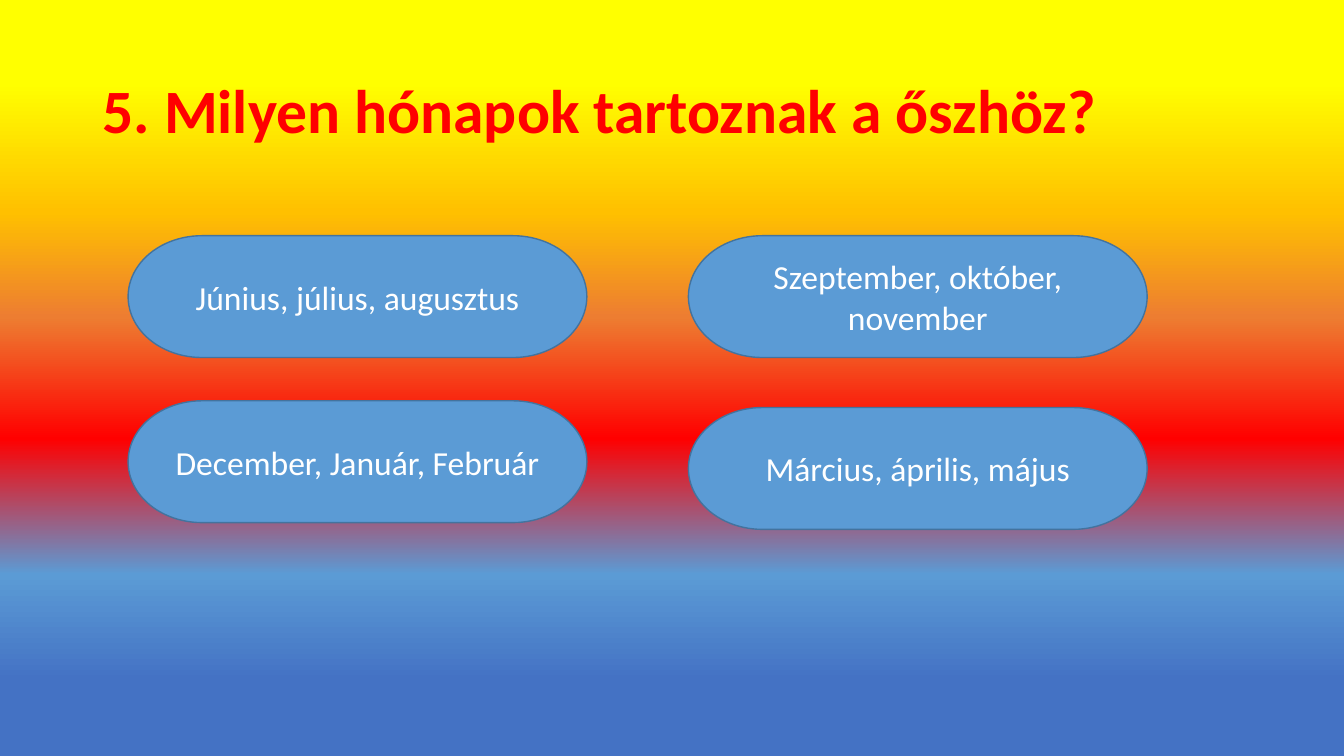
from lxml import etree
from pptx import Presentation
from pptx.dml.color import RGBColor
from pptx.enum.shapes import MSO_SHAPE
from pptx.enum.text import MSO_ANCHOR, PP_ALIGN
from pptx.oxml.ns import qn
from pptx.util import Cm, Pt

TERMINATOR = MSO_SHAPE.FLOWCHART_TERMINATOR
MIDDLE = MSO_ANCHOR.MIDDLE
LEFT, CENTER = PP_ALIGN.LEFT, PP_ALIGN.CENTER
TITLE_ONLY = 5

QUESTION = "5. Milyen hónapok tartoznak a őszhöz?"
# One column of answers per entry: (answer, top in cm)
ANSWER_COLUMNS = [
    [("Június, július, augusztus", 5.94), ("December, Január, Február", 10.1)],
    [("Szeptember, október, november", 5.94), ("Március, április, május", 10.27)],
]
COLORS = {
    "question": "FF0000",
    "answer": "FFFFFF",
    "button": "5B9BD5",
    "outline": "43739E",
}
SUNSET = {11: "FFFF00", 28: "FFC000", 42: "ED7D31",
          58: "FF0000", 76: "5B9BD5", 90: "4472C4"}

FONT = "Calibri"
FIRST_COLUMN, COLUMN_STEP = 3.23, 14.12
BUTTON_WIDTH, BUTTON_HEIGHT = 11.56, 3.07


def write_text(shape, text, size, color, align=CENTER, bold=False, line_spacing=1.0):
    frame = shape.text_frame
    frame.word_wrap = True
    frame.vertical_anchor = MIDDLE
    paragraph = frame.paragraphs[0]
    paragraph.alignment = align
    paragraph.line_spacing = line_spacing
    run = paragraph.add_run()
    run.text = text
    run.font.name = FONT
    run.font.size = Pt(size)
    run.font.bold = bold
    run.font.color.rgb = RGBColor.from_string(color)


def paint_background(slide, stops):
    """Fill the slide with a gradient running from top to bottom."""
    fill = slide.background.fill
    fill.gradient()
    fill.gradient_angle = 270
    stop_list = next(slide.element.iter(qn("a:gsLst")))
    for old_stop in list(stop_list):
        stop_list.remove(old_stop)
    for percent, color in stops.items():
        stop = etree.SubElement(stop_list, qn("a:gs"), pos=str(percent * 1000))
        etree.SubElement(stop, qn("a:srgbClr"), val=color)


def add_answer(slide, answer, left, top):
    button = slide.shapes.add_shape(
        TERMINATOR, Cm(left), Cm(top), Cm(BUTTON_WIDTH), Cm(BUTTON_HEIGHT))
    button.shadow.inherit = False
    button.fill.solid()
    button.fill.fore_color.rgb = RGBColor.from_string(COLORS["button"])
    button.line.color.rgb = RGBColor.from_string(COLORS["outline"])
    button.line.width = Pt(1)
    write_text(button, answer, size=24, color=COLORS["answer"])


def main():
    deck = Presentation()
    deck.slide_width, deck.slide_height = Cm(33.87), Cm(19.05)
    slide = deck.slides.add_slide(deck.slide_layouts[TITLE_ONLY])
    paint_background(slide, SUNSET)

    title = slide.shapes.title
    title.left, title.top = Cm(2.33), Cm(1.01)
    title.width, title.height = Cm(29.21), Cm(3.68)
    write_text(title, QUESTION, size=44, color=COLORS["question"],
               align=LEFT, bold=True, line_spacing=0.9)

    for column, answers in enumerate(ANSWER_COLUMNS):
        for answer, top in answers:
            add_answer(slide, answer, FIRST_COLUMN + column * COLUMN_STEP, top)

    deck.save("out.pptx")


if __name__ == "__main__":
    main()
